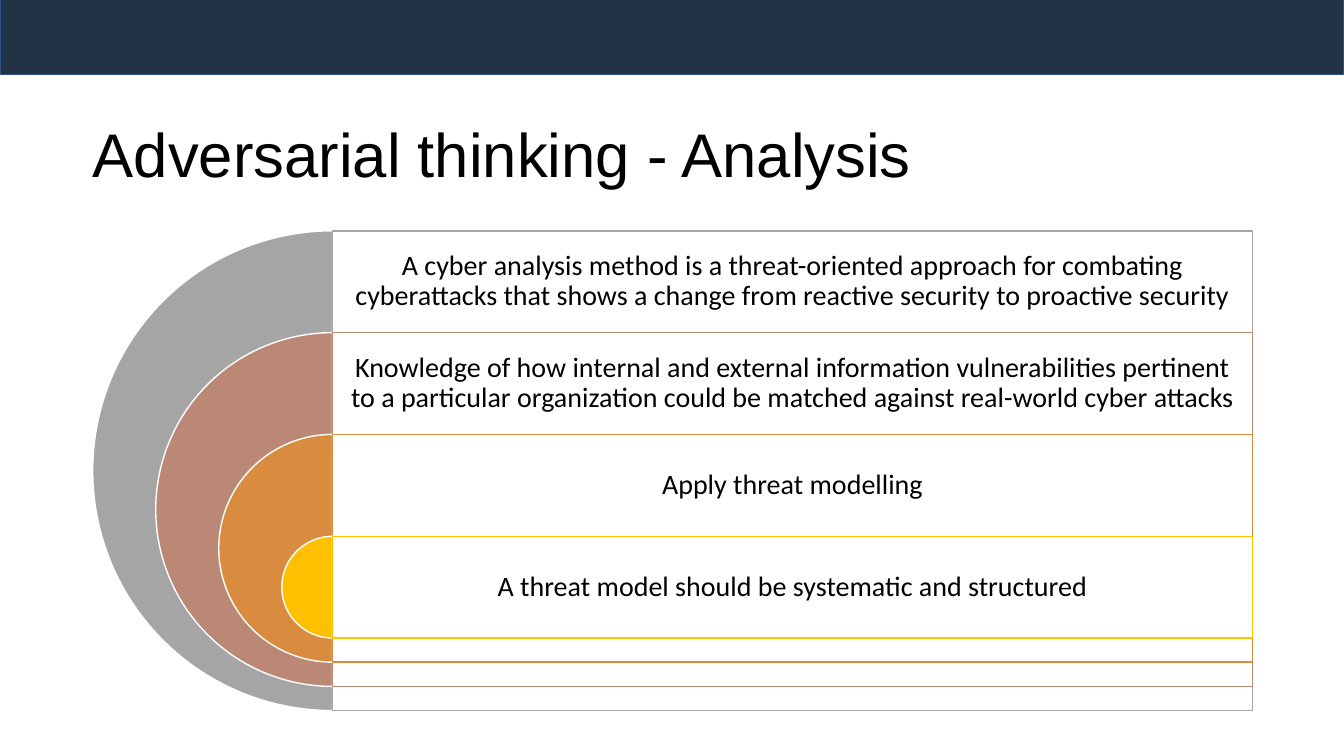
from lxml.etree import SubElement
from pptx import Presentation
from pptx.dml.color import RGBColor
from pptx.enum.shapes import MSO_SHAPE
from pptx.enum.text import MSO_ANCHOR, PP_ALIGN
from pptx.oxml.ns import qn
from pptx.util import Inches, Pt

WHITE = RGBColor(0xFF, 0xFF, 0xFF)
BLACK = RGBColor(0x00, 0x00, 0x00)
NAVY = RGBColor(0x22, 0x33, 0x46)
BLUE = RGBColor(0x32, 0x54, 0x91)
GREY = RGBColor(0xA5, 0xA5, 0xA5)
ROSE = RGBColor(0xBB, 0x88, 0x76)
ORANGE = RGBColor(0xD9, 0x8B, 0x3F)
GOLD = RGBColor(0xFF, 0xC0, 0x00)

TITLE = "Adversarial thinking - Analysis"
LAYERS = [
    ("A cyber analysis method is a threat-oriented approach for combating "
     "cyberattacks that shows a change from reactive security to proactive security", GREY),
    ("Knowledge of how internal and external information vulnerabilities pertinent "
     "to a particular organization could be matched against real-world cyber attacks", ROSE),
    ("Apply threat modelling", ORANGE),
    ("A threat model should be systematic and structured", GOLD),
]

SLIDE_W, SLIDE_H = 13.33, 7.5
CENTER_X, TOP = 3.3, 2.29
PANEL_W, BAND_H = 9.12, 1.01
OUTER_SIZE, SIZE_STEP = 4.76, 1.25


def add_shape(slide, kind, box, fill, line):
    s = slide.shapes.add_shape(kind, *map(Inches, box))
    s.shadow.inherit = False
    s.fill.solid()
    s.fill.fore_color.rgb = fill
    s.line.color.rgb = line
    s.line.width = Pt(1)
    return s


def set_text(s, text, size, font, align):
    tf = s.text_frame
    tf.word_wrap = True
    tf.vertical_anchor = MSO_ANCHOR.MIDDLE
    p = tf.paragraphs[0]
    p.text = text
    p.alignment = align
    p.line_spacing = 0.9
    p.font.size = Pt(size)
    p.font.name = font
    p.font.color.rgb = BLACK
    return tf


def add_layer(slide, index, text, color):
    """Draw one half disc with its panel and the text in the panel's top band."""
    size = OUTER_SIZE - index * SIZE_STEP
    top = TOP + index * BAND_H
    half_disc = add_shape(slide, MSO_SHAPE.PIE, (CENTER_X - size / 2, top, size, size), color, WHITE)
    half_disc.adjustments[0] = 54
    half_disc.adjustments[1] = 162

    panel = add_shape(slide, MSO_SHAPE.RECTANGLE, (CENTER_X, top, PANEL_W, size), WHITE, color)
    fill_color = panel.fill._xPr.find(qn("a:solidFill"))[0]
    SubElement(fill_color, qn("a:alpha"), val="90000")

    label = slide.shapes.add_textbox(*map(Inches, (CENTER_X, top, PANEL_W, BAND_H)))
    tf = set_text(label, text, 20, "Calibri", PP_ALIGN.CENTER)
    tf.margin_left = tf.margin_right = tf.margin_top = tf.margin_bottom = Inches(0.08)


def main():
    prs = Presentation()
    prs.slide_width, prs.slide_height = Inches(SLIDE_W), Inches(SLIDE_H)
    slide = prs.slides.add_slide(prs.slide_layouts[5])

    add_shape(slide, MSO_SHAPE.RECTANGLE, (0, -0.04, SLIDE_W, 0.78), NAVY, BLUE)

    title = slide.shapes.title
    title.left, title.top, title.width, title.height = map(Inches, (0.82, 0.84, 12.12, 1.45))
    set_text(title, TITLE, 44, "Arial", PP_ALIGN.LEFT)

    for index, (text, color) in enumerate(LAYERS):
        add_layer(slide, index, text, color)

    prs.save("out.pptx")


if __name__ == "__main__":
    main()
